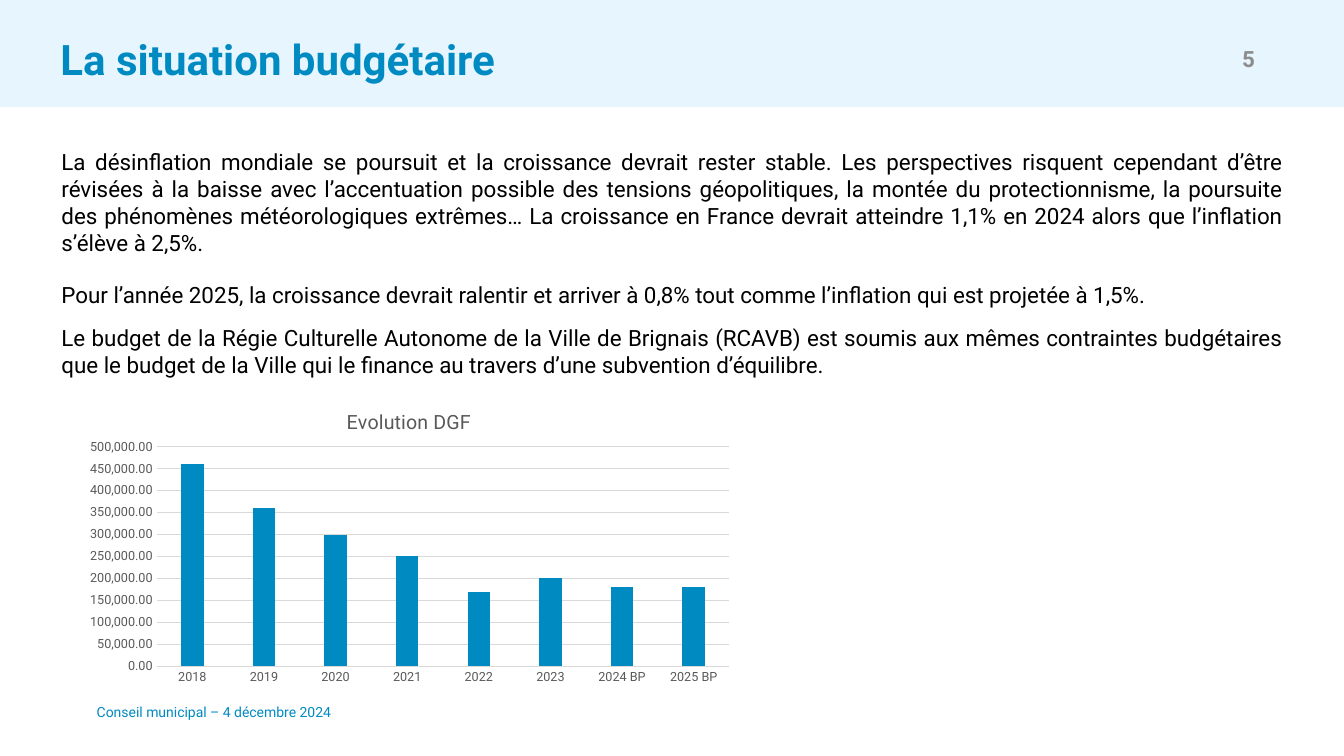
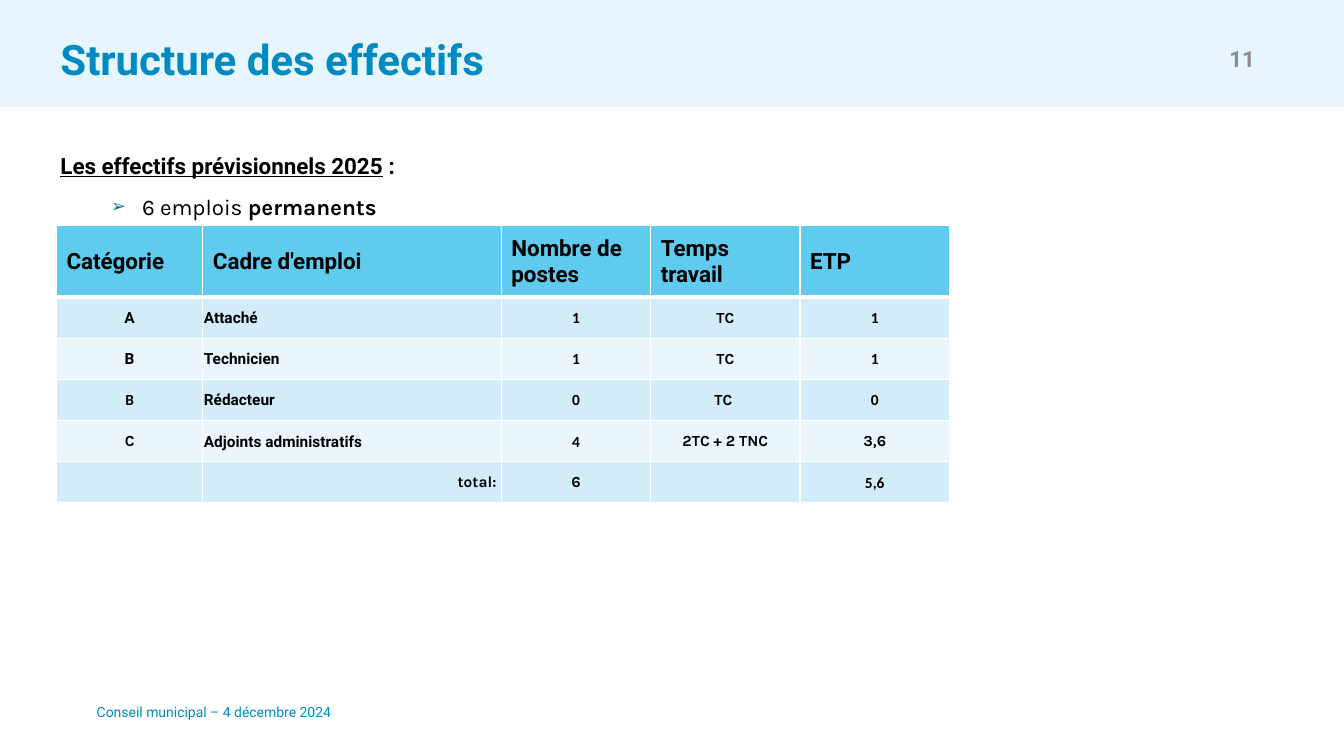
from dataclasses import dataclass
from typing import Optional

from lxml.etree import SubElement
from pptx import Presentation
from pptx.chart.data import CategoryChartData
from pptx.dml.color import RGBColor
from pptx.enum.chart import XL_CHART_TYPE, XL_TICK_MARK
from pptx.enum.shapes import MSO_SHAPE
from pptx.enum.text import MSO_ANCHOR, MSO_AUTO_SIZE, PP_ALIGN
from pptx.oxml import parse_xml
from pptx.oxml.ns import nsdecls, qn
from pptx.util import Pt

BLUE = RGBColor(0x00, 0x8A, 0xC2)
PALE = RGBColor(0xE6, 0xF5, 0xFE)
BLACK = RGBColor(0x00, 0x00, 0x00)
WHITE = RGBColor(0xFF, 0xFF, 0xFF)
GREY = RGBColor(0x8C, 0x8C, 0x8C)
SLATE = RGBColor(0x59, 0x59, 0x59)
RULE = RGBColor(0xD9, 0xD9, 0xD9)
TEAL = RGBColor(0x0F, 0x76, 0x98)
HEAD = RGBColor(0x5F, 0xCB, 0xEF)
BANDS = (RGBColor(0xD2, 0xEC, 0xF9), RGBColor(0xEA, 0xF6, 0xFC))
FONTS = {"R": "Roboto", "K": "Karla", "C": "Calibri"}
LEFT, WIDE = 40.3, 878.4


@dataclass(frozen=True)
class Run:
    text: str
    size: float = 16
    bold: bool = False
    color: RGBColor = BLACK
    font: str = "Roboto"
    line: bool = False


@dataclass(frozen=True)
class Para:
    runs: tuple[Run, ...]
    align: Optional[PP_ALIGN] = PP_ALIGN.LEFT
    before: float = 0
    mark: str = ""


@dataclass(frozen=True)
class Box:
    left: float
    top: float
    width: float
    height: float

    def points(self) -> tuple:
        return Pt(self.left), Pt(self.top), Pt(self.width), Pt(self.height)


@dataclass(frozen=True)
class Row:
    cells: tuple[str, ...]
    fonts: str
    height: float = 29.4


PROSE = (
    Para((Run("La désinflation mondiale se poursuit et la croissance devrait rester stable. "
              "Les perspectives risquent cependant d’être révisées à la baisse avec "
              "l’accentuation possible des tensions géopolitiques, la montée du "
              "protectionnisme, la poursuite des phénomènes météorologiques extrêmes… "
              "La croissance en France devrait atteindre 1,1% en 2024 alors que "
              "l’inflation s’élève à 2,5%."),), PP_ALIGN.JUSTIFY),
    Para((Run("Pour l’année 2025, la croissance devrait ralentir et arriver à 0,8% tout "
              "comme l’inflation qui est projetée à 1,5%."),), PP_ALIGN.JUSTIFY, 18),
    Para((Run("Le budget de la Régie Culturelle Autonome de la Ville de Brignais (RCAVB) "
              "est soumis aux mêmes contraintes budgétaires que le budget de la Ville qui "
              "le finance au travers d’une subvention d’équilibre."),), PP_ALIGN.JUSTIFY, 12),
)
STAFF = (
    Para((Run("Les effectifs prévisionnels 2025", bold=True, line=True),
          Run(" :", bold=True))),
    Para((Run("6 emplois ", font="Karla"), Run("permanents", bold=True, font="Karla")),
         before=10, mark="➢"),
)
YEARS = ("2018", "2019", "2020", "2021", "2022", "2023", "2024 BP", "2025 BP")
GRANTS = (460000, 360000, 300000, 250000, 170000, 200000, 180000, 180000)
COLS = (104.6, 213.2, 106.7, 106.7, 106.7)
ROWS = (
    Row(("Catégorie", "Cadre d'emploi", "Nombre de postes", "Temps travail", "ETP"),
        "RRRRR", 51),
    Row(("A", "Attaché", "1", "TC", "1"), "RRCKC"),
    Row(("B", "Technicien", "1", "TC", "1"), "RRCKC"),
    Row(("B", "Rédacteur", "0", "TC ", "0"), "CRCKC"),
    Row(("C", "Adjoints administratifs", "4", "2TC + 2 TNC", "3,6"), "KRCKK"),
    Row(("", "total: ", "6", "", "5,6"), "KKKKC", 23),
)


def write(frame, paras: tuple[Para, ...]) -> None:
    for spot, para in enumerate(paras):
        item = frame.paragraphs[0] if spot == 0 else frame.add_paragraph()
        props = item._p.get_or_add_pPr()
        if para.mark:
            item.level = 1
            props.set("marL", str(Pt(58.3)))
            props.set("indent", str(Pt(-22.3)))
            tint = SubElement(props, qn("a:buClr"))
            SubElement(tint, qn("a:srgbClr"), val=str(TEAL))
            SubElement(props, qn("a:buSzPct"), val="80000")
            SubElement(props, qn("a:buChar"), char=para.mark)
        else:
            props.set("marL", "0")
            props.set("indent", "0")
            SubElement(props, qn("a:buNone"))
        item.alignment = para.align
        item.space_before = Pt(para.before)
        for part in para.runs:
            run = item.add_run()
            run.text = part.text
            run.font.name = part.font
            run.font.size = Pt(part.size)
            run.font.bold = part.bold
            run.font.underline = part.line
            run.font.color.rgb = part.color


def place(shape, box: Box) -> None:
    shape.left, shape.top, shape.width, shape.height = box.points()


def fill_text(shape, paras: tuple[Para, ...], anchor=MSO_ANCHOR.MIDDLE,
              side: float = 2.9, edge: float = 0) -> None:
    frame = shape.text_frame
    frame.word_wrap = True
    frame.auto_size = MSO_AUTO_SIZE.NONE
    frame.vertical_anchor = anchor
    frame.margin_left = frame.margin_right = Pt(side)
    frame.margin_top = frame.margin_bottom = Pt(edge)
    write(frame, paras)


def add_band(slide) -> None:
    band = slide.shapes.add_shape(MSO_SHAPE.RECTANGLE, *Box(0, 0, 960, 76.3).points())
    band.shadow.inherit = False
    band.fill.solid()
    band.fill.fore_color.rgb = PALE
    band.line.fill.background()
    slide.slide_layout.shapes.element.insert(2, band.element)


def add_page(deck, title: str, page: str, box: Box, paras: tuple[Para, ...]):
    slide = deck.slides.add_slide(deck.slide_layouts[1])
    place(slide.shapes.title, Box(LEFT, 23.8, WIDE, 36))
    fill_text(slide.shapes.title, (Para((Run(title, 30, True, BLUE),)),))
    body = slide.placeholders[1]
    place(body, box)
    fill_text(body, paras, MSO_ANCHOR.TOP)
    foot = slide.shapes.add_textbox(*Box(66.2, 502.6, 396.7, 12.2).points())
    fill_text(foot, (Para((Run("Conseil municipal – 4 décembre 2024", 10, color=BLUE),)),))
    count = slide.shapes.add_textbox(*Box(848.9, 27.4, 54.7, 28.8).points())
    fill_text(count, (Para((Run(page, 16, True, GREY),), PP_ALIGN.RIGHT),),
              side=7.2, edge=3.6)
    return slide


def pin(node, spot: int, **sizes: float) -> None:
    for old in node.findall(qn("c:layout")):
        node.remove(old)
    modes = {"xMode": "edge", "yMode": "edge"}
    target = {"layoutTarget": "inner"} if "w" in sizes else {}
    tags = "".join(f'<c:{key} val="{val}"/>'
                   for key, val in {**target, **modes, **sizes}.items())
    node.insert(spot, parse_xml(
        f'<c:layout {nsdecls("c")}><c:manualLayout>{tags}</c:manualLayout></c:layout>'))


def add_bars(slide) -> None:
    data = CategoryChartData(number_format="#,##0.00")
    data.categories = YEARS
    data.add_series("Series 1", GRANTS)
    chart = slide.shapes.add_chart(XL_CHART_TYPE.COLUMN_CLUSTERED,
                                   *Box(54.7, 275.8, 475.9, 217.4).points(), data).chart
    chart.font.name = "Roboto"
    chart.font.size = Pt(10)
    chart.font.color.rgb = BLACK
    chart.has_legend = False
    chart.has_title = True
    run = chart.chart_title.text_frame.paragraphs[0].add_run()
    run.text = "Evolution DGF"
    run.font.name = "Roboto"
    run.font.size = Pt(14)
    run.font.bold = False
    run.font.color.rgb = SLATE
    chart.chart_title.include_in_layout = False
    pin(chart.chart_title._element, 1, x=0.4, y=0.06)
    pin(chart._chartSpace.chart.plotArea, 0, x=0.12, y=0.2, w=0.86, h=0.72)
    plot = chart.plots[0]
    plot.gap_width = 219
    plot.overlap = -27
    plot.vary_by_categories = False
    bars = plot.series[0].format.fill
    bars.solid()
    bars.fore_color.rgb = BLUE
    years, scale = chart.category_axis, chart.value_axis
    for axis in (years, scale):
        axis.major_tick_mark = axis.minor_tick_mark = XL_TICK_MARK.NONE
        axis.tick_labels.font.name = "Roboto"
        axis.tick_labels.font.size = Pt(9)
        axis.tick_labels.font.color.rgb = SLATE
    scale.minimum_scale, scale.maximum_scale, scale.major_unit = 0, 500000, 50000
    scale.tick_labels.number_format = "#,##0.00"
    scale.tick_labels.number_format_is_linked = False
    scale.format.line.fill.background()
    for line in (years.format.line, scale.major_gridlines.format.line):
        line.color.rgb = RULE
        line.width = Pt(0.75)


def rule_cell(cell, top: float, base: float) -> None:
    props = cell._tc.get_or_add_tcPr()
    for spot, (side, width) in enumerate((("L", 1), ("R", 1), ("T", top), ("B", base))):
        props.insert(spot, parse_xml(
            f'<a:ln{side} {nsdecls("a")} w="{Pt(width)}"><a:solidFill>'
            f'<a:srgbClr val="{WHITE}"/></a:solidFill></a:ln{side}>'))


def add_grid(slide) -> None:
    box = Box(LEFT, 161.3, sum(COLS), sum(row.height for row in ROWS))
    grid = slide.shapes.add_table(len(ROWS), len(COLS), *box.points()).table
    grid.horz_banding = False
    for col, width in zip(grid.columns, COLS):
        col.width = Pt(width)
    for down, row in enumerate(ROWS):
        grid.rows[down].height = Pt(row.height)
        for over, text in enumerate(row.cells):
            cell = grid.cell(down, over)
            cell.fill.solid()
            cell.fill.fore_color.rgb = BANDS[(down - 1) % 2] if down else HEAD
            rule_cell(cell, 3 if down == 1 else 1, 1 if down else 3)
            if not text:
                continue
            cell.vertical_anchor = MSO_ANCHOR.MIDDLE
            align = PP_ALIGN.LEFT
            if down:
                cell.margin_left = cell.margin_right = cell.margin_top = Pt(0.7)
                cell.margin_bottom = Pt(0)
                if over != 1:
                    align = PP_ALIGN.CENTER
                elif down == len(ROWS) - 1:
                    align = PP_ALIGN.RIGHT
            run = Run(text, 11 if down else 16, True, font=FONTS[row.fonts[over]])
            write(cell.text_frame, (Para((run,), align),))


def main() -> None:
    deck = Presentation()
    deck.slide_width, deck.slide_height = Pt(960), Pt(540)
    state = add_page(deck, "La situation budgétaire", "5",
                     Box(41, 105.8, WIDE, 181.4), PROSE)
    add_band(state)
    add_bars(state)
    staff = add_page(deck, "Structure des effectifs", "11",
                     Box(LEFT, 108.7, WIDE, 49), STAFF)
    add_grid(staff)
    deck.save("out.pptx")


if __name__ == "__main__":
    main()
